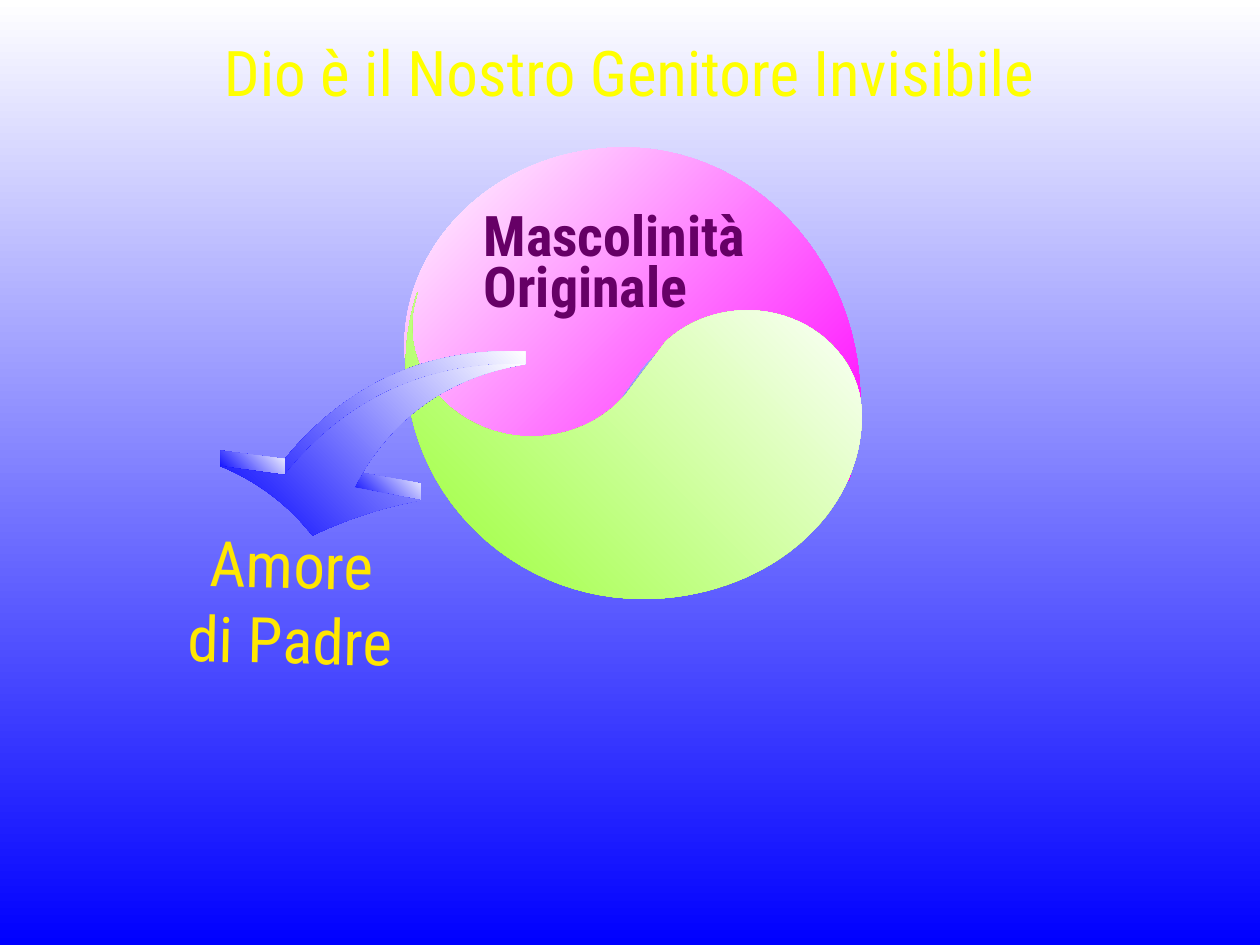
from dataclasses import dataclass
from math import cos, hypot, radians, sin

from pptx import Presentation
from pptx.dml.color import RGBColor
from pptx.enum.text import MSO_ANCHOR, PP_ALIGN
from pptx.util import Inches, Pt

LEFT, CENTER = PP_ALIGN.LEFT, PP_ALIGN.CENTER
TOP = MSO_ANCHOR.TOP

WHITE = RGBColor(0xFF, 0xFF, 0xFF)
BLUE = RGBColor(0x00, 0x00, 0xFF)
MAGENTA = RGBColor(0xFF, 0x00, 0xFF)
GREEN = RGBColor(0x99, 0xFF, 0x33)
PURPLE = RGBColor(0x66, 0x00, 0x66)
YELLOW = RGBColor(0xFF, 0xFF, 0x00)
GOLD = RGBColor(0xFF, 0xE7, 0x01)

FONT = "Roboto Condensed"
# Gradient angles, counter-clockwise
DOWN, DOWN_RIGHT, UP_RIGHT = 270, 315, 45
CURVE_STEPS = 32

Point = tuple[float, float]


@dataclass
class Arc:
    """Part of an ellipse; angles in degrees, clockwise from the right."""
    center: Point
    radius_x: float
    radius_y: float
    start: float
    end: float

    def points(self) -> list[Point]:
        step = (self.end - self.start) / CURVE_STEPS
        angles = [radians(self.start + step * i) for i in range(CURVE_STEPS + 1)]
        x, y = self.center
        return [(x + self.radius_x * cos(a), y + self.radius_y * sin(a)) for a in angles]


@dataclass
class Bow:
    """A curve between two points that bulges upwards by rise."""
    start: Point
    end: Point
    rise: float

    def points(self) -> list[Point]:
        (x1, y1), (x2, y2) = self.start, self.end
        dx, dy = x2 - x1, y2 - y1
        lift = self.rise / hypot(dx, dy) * (1 if dx > 0 else -1)
        curve = []
        for i in range(CURVE_STEPS + 1):
            t = i / CURVE_STEPS
            bulge = 4 * t * (1 - t) * lift
            curve.append((x1 + t * dx + bulge * dy, y1 + t * dy - bulge * dx))
        return curve


@dataclass
class Outline:
    points: list[Point]
    start: RGBColor
    end: RGBColor
    angle: float


@dataclass
class Label:
    lines: list[str]
    left: float
    top: float
    width: float
    height: float
    size: int
    color: RGBColor
    align: PP_ALIGN = CENTER
    bold: bool = False
    wrap: bool = False
    spacing: float = 1.0
    rotation: float = 0


def trace(curves: list) -> list[Point]:
    return [point for curve in curves for point in curve.points()]


# Circle: the upper half is bounded by its rim and by the two lobes of the wave
UPPER_HALF = trace([
    Arc((4.95, 3.19), 1.88, 2.02, 18, -90),    # right rim
    Arc((4.95, 2.75), 1.74, 1.58, -90, -180),  # left rim
    Arc((4.12, 2.75), 0.91, 0.91, 180, 45),    # left lobe
    Arc((5.83, 3.52), 0.95, 0.95, 219, 377),   # right lobe
])
# The lower half is the upper one turned half round and slightly flattened
LOWER_HALF = [(10.05 - x, 5.83 - 0.92 * y) for x, y in UPPER_HALF]
CIRCLE = [
    Outline(UPPER_HALF, WHITE, MAGENTA, DOWN_RIGHT),
    Outline(LOWER_HALF, GREEN, WHITE, UP_RIGHT),
]

# Arrow: corners of the front face
TAIL = (4.17, 2.89)
LEFT_NECK, LEFT_WING = (2.26, 3.77), (1.75, 3.70)
TIP = (2.48, 4.25)
RIGHT_WING, RIGHT_NECK = (3.34, 3.97), (2.81, 3.87)


def to_back(corner: Point) -> Point:
    """The corner of the back face that lies behind a front corner."""
    x, y = corner
    return x, 2.78 + 0.97 * (y - 2.88)


def arrow_face(tail: Point, left_neck: Point, left_wing: Point, tip: Point,
               right_wing: Point, right_neck: Point) -> list[Point]:
    return trace([
        Bow(tail, left_neck, 0.26),    # outer edge
        Bow(left_wing, tip, 0.06),     # left side of the head
        Bow(tip, right_wing, 0.03),    # right side of the head
        Bow(right_neck, TAIL, 0.21),   # inner edge, shared tail end
    ])


def barb(wing: Point, neck: Point) -> list[Point]:
    """The side that joins both faces between a wing and the neck."""
    return [to_back(wing), wing, neck, to_back(neck)]


FRONT_CORNERS = [TAIL, LEFT_NECK, LEFT_WING, TIP, RIGHT_WING, RIGHT_NECK]
ARROW_PARTS = [
    arrow_face(*map(to_back, FRONT_CORNERS)),
    barb(RIGHT_WING, RIGHT_NECK),
    barb(LEFT_WING, LEFT_NECK),
    arrow_face(*FRONT_CORNERS),
]
ARROW = [Outline(part, BLUE, WHITE, UP_RIGHT) for part in ARROW_PARTS]

LABELS = [
    Label(["Mascolinità Originale"], 3.74, 1.67, 2.76, 0.91, 32, PURPLE,
          align=LEFT, bold=True, wrap=True, spacing=0.75),
    Label(["Dio è il Nostro Genitore Invisibile"], 0.33, 0.22, 9.33, 0.69, 36, YELLOW),
    Label(["Amore", "di Padre"], 0.42, 4.12, 3.74, 3.04, 36, GOLD, rotation=1.2),
]


def set_gradient(fill, start: RGBColor, end: RGBColor, angle: float) -> None:
    fill.gradient()
    fill.gradient_angle = angle
    for stop, color in zip(fill.gradient_stops, (start, end)):
        stop.color.rgb = color


def draw_group(page, outlines: list[Outline]) -> None:
    group = page.shapes.add_group_shape()
    for outline in outlines:
        first, *rest = [(Inches(x), Inches(y)) for x, y in outline.points]
        builder = group.shapes.build_freeform(*first)
        builder.add_line_segments(rest, close=True)
        shape = builder.convert_to_shape()
        shape.shadow.inherit = False
        shape.line.fill.background()
        set_gradient(shape.fill, outline.start, outline.end, outline.angle)


def draw_label(page, label: Label) -> None:
    box = page.shapes.add_textbox(
        Inches(label.left), Inches(label.top), Inches(label.width), Inches(label.height))
    box.rotation = label.rotation
    frame = box.text_frame
    frame.word_wrap = label.wrap
    frame.vertical_anchor = TOP
    frame.text = "\n".join(label.lines)
    for para in frame.paragraphs:
        para.alignment = label.align
        para.line_spacing = label.spacing
        para.font.name = FONT
        para.font.size = Pt(label.size)
        para.font.bold = label.bold
        para.font.color.rgb = label.color


def main() -> None:
    deck = Presentation()
    deck.slide_width, deck.slide_height = Inches(10), Inches(7.5)
    page = deck.slides.add_slide(deck.slide_layouts[6])
    set_gradient(page.background.fill, WHITE, BLUE, DOWN)

    # Two halves of the circle, then the arrow leaving it
    for outlines in (CIRCLE, ARROW):
        draw_group(page, outlines)
    for label in LABELS:
        draw_label(page, label)
    deck.save("out.pptx")


if __name__ == "__main__":
    main()
